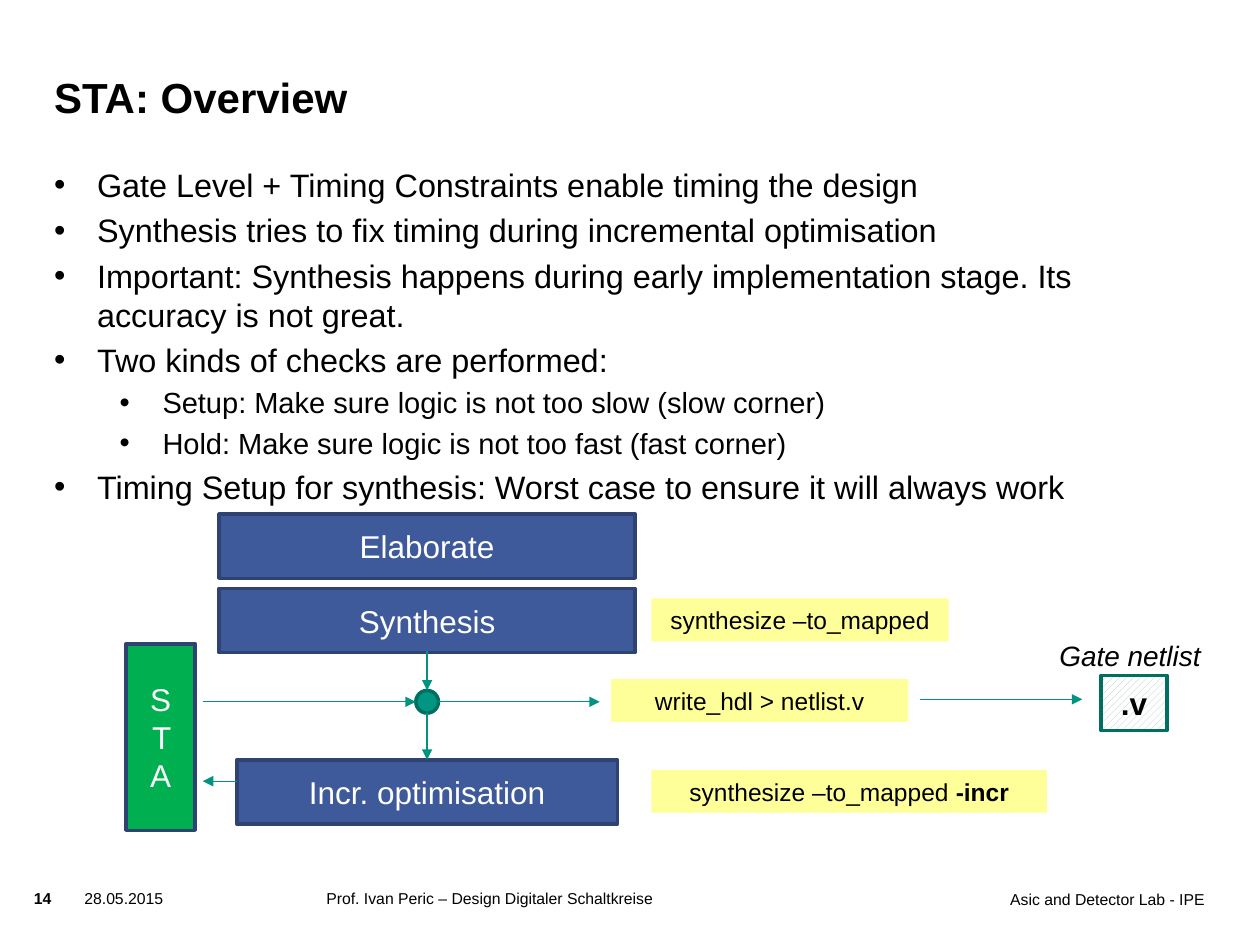
from lxml.etree import SubElement
from pptx import Presentation
from pptx.dml.color import RGBColor
from pptx.enum.dml import MSO_PATTERN
from pptx.enum.shapes import MSO_CONNECTOR, MSO_SHAPE
from pptx.enum.text import MSO_ANCHOR, MSO_AUTO_SIZE, PP_ALIGN
from pptx.oxml.ns import qn
from pptx.util import Inches, Pt

BLACK = RGBColor(0x00, 0x00, 0x00)
WHITE = RGBColor(0xFF, 0xFF, 0xFF)
BLUE = RGBColor(0x3F, 0x5A, 0x9A)
NAVY = RGBColor(0x2F, 0x43, 0x72)
GREEN = RGBColor(0x00, 0xB0, 0x50)
TEAL = RGBColor(0x00, 0x96, 0x82)
ARROW_TEAL = RGBColor(0x00, 0x93, 0x7F)
DARK_TEAL = RGBColor(0x00, 0x6F, 0x60)
PALE_TEAL = RGBColor(0xAA, 0xC9, 0xC1)
YELLOW = RGBColor(0xFF, 0xFF, 0x99)

# Content
TITLE = "STA: Overview"
BULLETS = [  # level, text
    (0, "Gate Level + Timing Constraints enable timing the design"),
    (0, "Synthesis tries to fix timing during incremental optimisation"),
    (0, "Important: Synthesis happens during early implementation stage. "
        "Its accuracy is not great."),
    (0, "Two kinds of checks are performed:"),
    (1, "Setup: Make sure logic is not too slow (slow corner)"),
    (1, "Hold: Make sure logic is not too fast (fast corner)"),
    (0, "Timing Setup for synthesis: Worst case to ensure it will always work"),
]
LEVELS = [(18.5, 0.34), (16.6, 0.86)]  # text size, indent
HANGING = 0.34
FOOTERS = [  # text, left, top, width, bold, alignment
    ("14", 0.27, 7.05, 0.36, True, PP_ALIGN.LEFT),
    ("28.05.2015", 0.67, 7.05, 0.94, False, PP_ALIGN.LEFT),
    ("Prof. Ivan Peric – Design Digitaler Schaltkreise",
     2.59, 7.05, 2.99, False, PP_ALIGN.LEFT),
    ("Asic and Detector Lab - IPE", 6.57, 7.06, 2.99, False, PP_ALIGN.RIGHT),
]

# Flow chart geometry: everything hangs on one axis and one node
AXIS, NODE_Y, NODE_R = 3.39, 5.57, 0.09
STEP_H, COMMAND_H = 0.51, 0.34
STEPS = [("Elaborate", 4.08, 3.3), ("Synthesis", 4.67, 3.3),
         ("Incr. optimisation", 6.03, 3.02)]  # text, top, width
COMMANDS = [  # runs, left, top, width
    (["synthesize –to_mapped"], 5.17, 4.75, 2.36),
    (["write_hdl > netlist.v"], 4.85, 5.39, 2.36),
    (["synthesize –to_mapped ", "-incr"], 5.17, 6.11, 3.14),
]
ARROWS = [  # from, to
    ((1.88, 6.2), (1.61, 6.2)),
    ((1.61, NODE_Y), (AXIS - NODE_R, NODE_Y)),
    ((AXIS + NODE_R, NODE_Y), (4.76, NODE_Y)),
    ((AXIS, 5.17), (AXIS, NODE_Y - NODE_R)),
    ((AXIS, NODE_Y + NODE_R), (AXIS, 6.03)),
    ((7.3, 5.55), (8.59, 5.55)),
]


def style(paragraph, size, color=BLACK, bold=False, italic=False,
          align=PP_ALIGN.LEFT):
    paragraph.alignment = align
    for run in paragraph.runs:
        font = run.font
        font.name, font.size, font.bold, font.italic = "Arial", Pt(size), bold, italic
        font.color.rgb = color


def place(shape, left, top, width, height):
    shape.left, shape.top = Inches(left), Inches(top)
    shape.width, shape.height = Inches(width), Inches(height)


def strip_margins(frame):
    frame.margin_left = frame.margin_right = 0
    frame.margin_top = frame.margin_bottom = 0
    frame.auto_size = MSO_AUTO_SIZE.NONE
    frame.word_wrap = True


def add_box(slide, preset, left, top, width, height, fill, line=None):
    box = slide.shapes.add_shape(preset, Inches(left), Inches(top),
                                 Inches(width), Inches(height))
    box.shadow.inherit = False
    box.fill.solid()
    box.fill.fore_color.rgb = fill
    if line is None:
        box.line.fill.background()
    else:
        box.line.color.rgb = line
        box.line.width = Pt(2)
    box.text_frame.vertical_anchor = MSO_ANCHOR.MIDDLE
    return box


def label(box, text, size=18, color=WHITE, **look):
    box.text_frame.text = text
    style(box.text_frame.paragraphs[0], size, color, align=PP_ALIGN.CENTER, **look)


def add_text(slide, text, left, top, width, height):
    box = slide.shapes.add_textbox(Inches(left), Inches(top),
                                   Inches(width), Inches(height))
    box.text_frame.word_wrap = True
    box.text_frame.text = text
    return box.text_frame


def add_arrow(slide, start, end):
    arrow = slide.shapes.add_connector(MSO_CONNECTOR.STRAIGHT,
                                       *map(Inches, start + end))
    arrow.line.color.rgb = ARROW_TEAL
    arrow.line.width = Pt(0.75)
    SubElement(arrow.line._get_or_add_ln(), qn("a:tailEnd"), type="triangle")
    SubElement(arrow._element.spPr, qn("a:effectLst"))


def fill_bullets(frame):
    for index, (level, text) in enumerate(BULLETS):
        item = frame.add_paragraph() if index else frame.paragraphs[0]
        size, indent = LEVELS[level]
        item.text, item.level = text, level
        item.line_spacing = 1.0
        item.space_before = Pt(size * 0.2 if index else 0)
        props = item._p.get_or_add_pPr()
        props.set("marL", str(Inches(indent)))
        props.set("indent", str(-Inches(HANGING)))
        SubElement(props, qn("a:buFont"), typeface="Arial")
        SubElement(props, qn("a:buChar"), char="•")
        style(item, size)


def main():
    deck = Presentation()
    deck.slide_width, deck.slide_height = Inches(10), Inches(7.5)
    slide = deck.slides.add_slide(deck.slide_layouts[1])

    # Title and list
    title, body = slide.placeholders
    place(title, 0.43, 0.36, 7.56, 0.61)
    strip_margins(title.text_frame)
    title.text_frame.vertical_anchor = MSO_ANCHOR.BOTTOM
    title.text_frame.text = TITLE
    style(title.text_frame.paragraphs[0], 24, bold=True)
    place(body, 0.43, 1.31, 9.14, 2.44)
    strip_margins(body.text_frame)
    fill_bullets(body.text_frame)

    # Footer line
    for text, left, top, width, bold, align in FOOTERS:
        footer = add_text(slide, text, left, top, width, 0.3)
        strip_margins(footer)
        style(footer.paragraphs[0], 9, bold=bold, align=align)

    # Flow steps and the timing analysis bar
    for text, top, width in STEPS:
        step = add_box(slide, MSO_SHAPE.RECTANGLE, AXIS - width / 2, top,
                       width, STEP_H, BLUE, NAVY)
        label(step, text)
    sta = add_box(slide, MSO_SHAPE.RECTANGLE, 1, 5.11, 0.55, 1.48, GREEN, NAVY)
    label(sta, "STA")
    sta.text_frame._txBody.bodyPr.set("vert", "wordArtVert")

    # Node and arrows
    add_box(slide, MSO_SHAPE.OVAL, AXIS - NODE_R, NODE_Y - NODE_R,
            2 * NODE_R, 2 * NODE_R, TEAL, DARK_TEAL)
    for start, end in ARROWS:
        add_arrow(slide, start, end)

    # Commands; a second run is the emphasised option
    for parts, left, top, width in COMMANDS:
        command = add_box(slide, MSO_SHAPE.RECTANGLE, left, top, width,
                          COMMAND_H, YELLOW)
        label(command, parts[0], 14, BLACK)
        for option in parts[1:]:
            run = command.text_frame.paragraphs[0].add_run()
            run.text = option
            run.font.name, run.font.size, run.font.bold = "Arial", Pt(14), True
            run.font.color.rgb = BLACK

    # Resulting netlist file
    netlist = add_box(slide, MSO_SHAPE.RECTANGLE, 8.74, 5.36, 0.52, 0.44,
                      WHITE, DARK_TEAL)
    netlist.fill.patterned()
    netlist.fill.pattern = MSO_PATTERN.WIDE_UPWARD_DIAGONAL
    netlist.fill.fore_color.rgb = PALE_TEAL
    netlist.fill.back_color.rgb = WHITE
    label(netlist, ".v", color=BLACK, bold=True)
    caption = add_text(slide, "Gate netlist", 8.31, 5.02, 1.39, 0.37)
    style(caption.paragraphs[0], 16, italic=True)

    deck.save("out.pptx")


if __name__ == "__main__":
    main()
